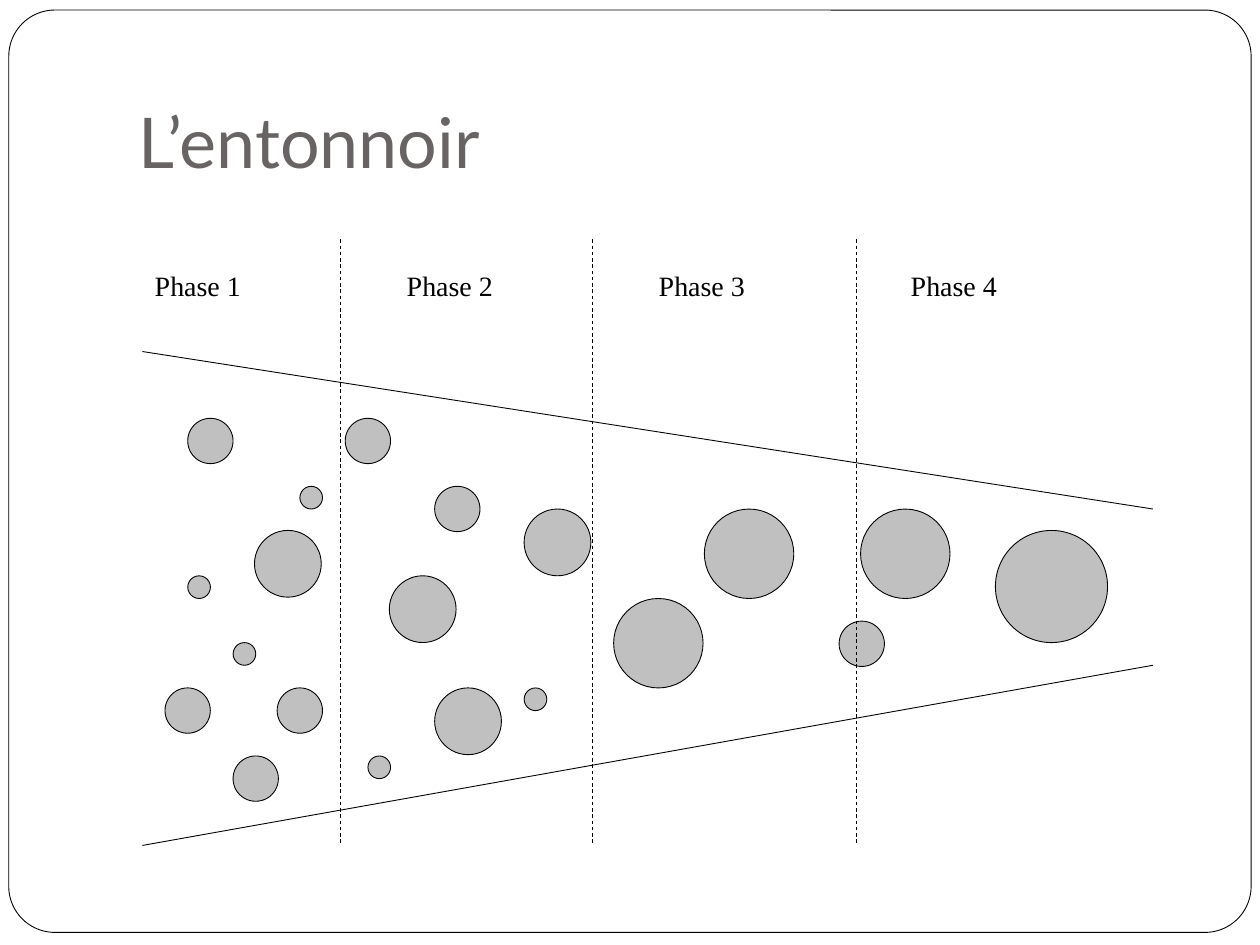
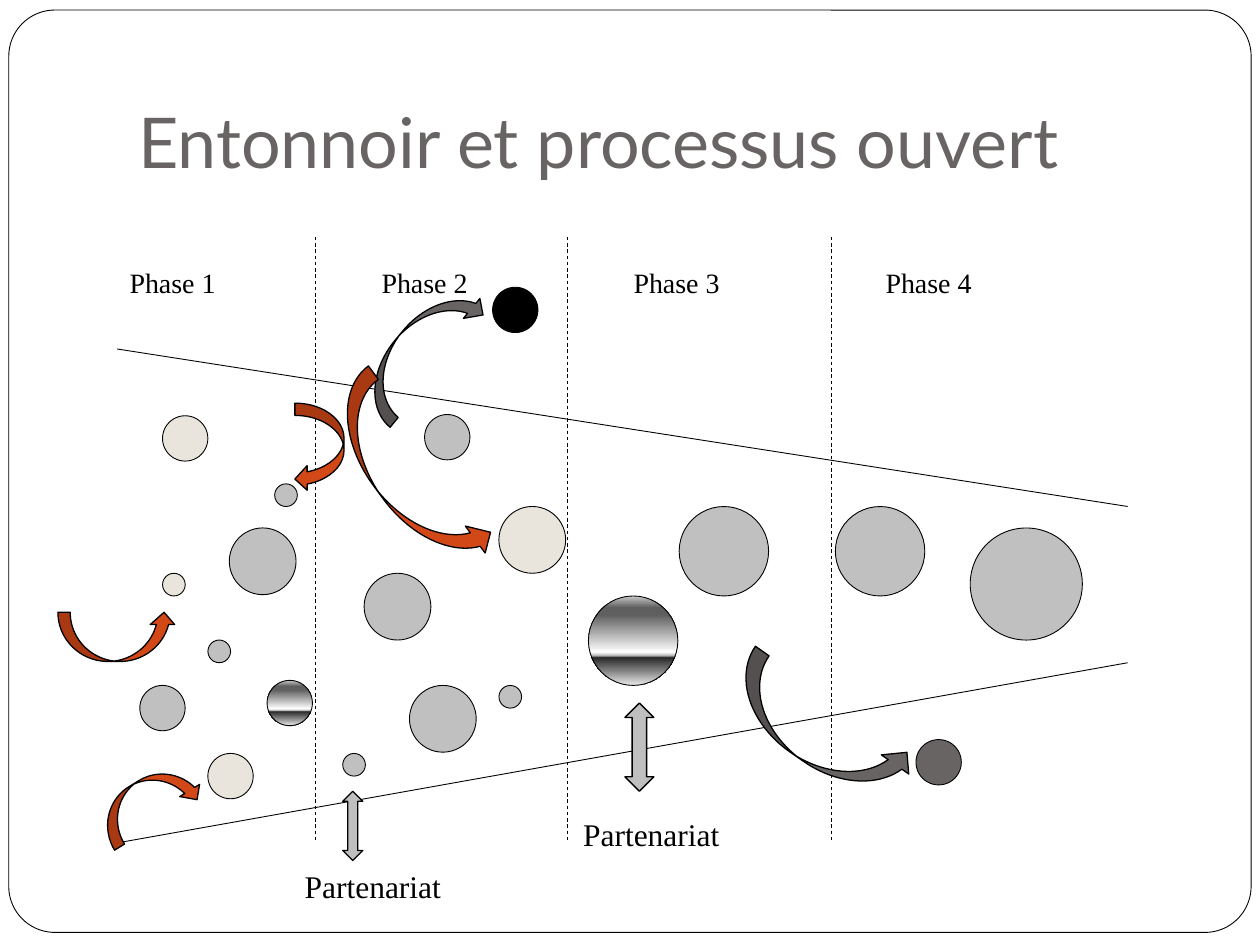
from lxml.etree import SubElement
from pptx import Presentation
from pptx.dml.color import RGBColor
from pptx.enum.dml import MSO_LINE
from pptx.enum.shapes import MSO_CONNECTOR, MSO_SHAPE
from pptx.enum.text import MSO_ANCHOR
from pptx.oxml.ns import qn
from pptx.util import Inches, Pt

BLACK, WHITE, GREY = "000000", "FFFFFF", "C0C0C0"
SLATE, CREAM, RUST, ARROW_GREY = "696464", "E9E5DC", "D34817", "BFBFBF"
CHROME = [(0, "CBCBCB"), (13, "5F5F5F"), (21, "5F5F5F"), (63, "FFFFFF"),
          (67, "B2B2B2"), (69, "292929"), (82, "777777"), (100, "EAEAEA")]

TITLE_FONT = {"name": "Lato", "size": Pt(40)}
PHASE_FONT = {"name": "Times New Roman", "size": Pt(16)}
LABEL_FONT = {"name": "Times New Roman", "size": Pt(18)}
TITLE_FRAME = {"vertical_anchor": MSO_ANCHOR.BOTTOM, "margin_bottom": Inches(0.1)}

TINY, SMALL, MEDIUM, LARGE, HUGE = 0.18, 0.36, 0.53, 0.71, 0.89


def add_outlined(page, kind, at, fill, width=0.5):
    """Add a black-outlined preset shape; a list as fill gives gradient stops."""
    shape = page.shapes.add_shape(kind, *map(Inches, at))
    shape.shadow.inherit = False
    shape.line.color.rgb = RGBColor.from_string(BLACK)
    shape.line.width = Pt(width)
    if isinstance(fill, str):
        shape.fill.solid()
        shape.fill.fore_color.rgb = RGBColor.from_string(fill)
        return shape
    shape.fill.gradient()
    shape.fill.gradient_angle = 270
    stops = shape._element.spPr.find(qn("a:gradFill")).find(qn("a:gsLst"))
    for old_stop in list(stops):
        stops.remove(old_stop)
    for percent, colour in fill:
        stop = SubElement(stops, qn("a:gs"), pos=str(percent * 1000))
        SubElement(stop, qn("a:srgbClr"), val=colour)
    return shape


def add_text(page, at, text, font, colour=BLACK, frame_format={}):
    box = page.shapes.add_textbox(*map(Inches, at))
    box.text_frame.word_wrap = True
    for name, value in frame_format.items():
        setattr(box.text_frame, name, value)
    para = box.text_frame.paragraphs[0]
    span = para.add_run()
    span.text = text
    for name, value in font.items():
        setattr(span.font, name, value)
    span.font.color.rgb = RGBColor.from_string(colour)
    return para


# Funnel geometry, before the offset of each slide
funnel_lines = [
    (1.13, 6.71, 9.15, 5.28, MSO_LINE.SOLID),
    (1.13, 2.79, 9.15, 4.04, MSO_LINE.SOLID),
] + [(x, 1.9, x, 6.71, MSO_LINE.DASH) for x in (2.7, 4.7, 6.8)]

# Projects that stay grey on both slides: left, top, diameter
steady_projects = [
    (2.38, 3.86, TINY), (1.85, 5.1, TINY), (2.02, 4.21, MEDIUM),
    (1.31, 5.46, SMALL), (3.09, 4.57, MEDIUM), (4.16, 5.46, TINY),
    (3.45, 5.46, MEDIUM), (5.59, 4.04, LARGE), (7.9, 4.21, HUGE),
    (6.83, 4.04, LARGE), (2.92, 6, TINY),
]
# Projects in the same place on both slides, with their open-process fill
opened_projects = [
    (1.49, 3.32, SMALL, CREAM), (1.49, 4.57, TINY, CREAM),
    (4.16, 4.04, MEDIUM, CREAM), (1.85, 6, SMALL, CREAM),
    (4.87, 4.75, LARGE, CHROME),
]
closed_funnel = [(x, y, size, GREY) for x, y, size, _ in opened_projects] + [
    (2.2, 5.46, SMALL, GREY), (3.45, 3.86, SMALL, GREY),
    (6.66, 4.93, SMALL, GREY), (2.74, 3.32, SMALL, GREY),
]
open_funnel = opened_projects + [
    (2.32, 5.42, SMALL, CHROME), (3.57, 3.31, SMALL, GREY),
    (7.47, 5.89, SMALL, SLATE), (4.11, 2.3, SMALL, BLACK),
]
funnels = [
    ("L’entonnoir", 0, 0, closed_funnel),
    ("Entonnoir et processus ouvert", -0.2, -0.02, open_funnel),
]

deck = Presentation()
deck.slide_width, deck.slide_height = Inches(10), Inches(7.5)

for title, dx, dy, projects in funnels:
    page = deck.slides.add_slide(deck.slide_layouts[6])
    frame = add_outlined(page, MSO_SHAPE.ROUNDED_RECTANGLE,
                         (0.07, 0.08, 9.86, 7.32), WHITE)
    frame.adjustments[0] = 0.05
    add_text(page, (1, 0.3, 8.5, 1.25), title, TITLE_FONT, SLATE, TITLE_FRAME)

    phases = "\t".join(f"Phase {number}" for number in range(1, 5))
    para = add_text(page, (1.13 + dx, 2.08 + dy, 7.84, 0.53), phases, PHASE_FONT)
    tabs = SubElement(para._p.get_or_add_pPr(), qn("a:tabLst"))
    for column in (1, 2, 3):
        SubElement(tabs, qn("a:tab"), pos=str(Inches(2 * column)), algn="l")

    grey_projects = [(*project, GREY) for project in steady_projects]
    for x, y, size, fill in grey_projects + projects:
        add_outlined(page, MSO_SHAPE.OVAL, (x + dx, y + dy, size, size), fill)

    for x1, y1, x2, y2, dash in funnel_lines:
        ends = (x1 + dx, y1 + dy, x2 + dx, y2 + dy)
        line = page.shapes.add_connector(MSO_CONNECTOR.STRAIGHT, *map(Inches, ends))
        line.line.color.rgb = RGBColor.from_string(BLACK)
        line.line.width = Pt(0.5)
        line.line.dash_style = dash
        SubElement(line._element.spPr, qn("a:effectLst"))

# Exchanges with the outside, on the open-process slide
LEFT, DOWN = MSO_SHAPE.CURVED_LEFT_ARROW, MSO_SHAPE.CURVED_DOWN_ARROW
BOTH_WAYS = MSO_SHAPE.UP_DOWN_ARROW
exchanges = [
    (LEFT, (2.34, 3.2, 0.39, 0.7), RUST, 0, None),
    (DOWN, (2.71, 2.57, 1.26, 0.41), SLATE, 309.6, None),
    (BOTH_WAYS, (4.96, 5.58, 0.23, 0.7), ARROW_GREY, 0, None),
    (DOWN, (5.7, 5.54, 1.6, 0.53), SLATE, 35, "flipV"),
    (BOTH_WAYS, (2.72, 6.28, 0.16, 0.55), ARROW_GREY, 0, None),
    (LEFT, (2.97, 2.89, 0.53, 1.77), RUST, 323.7, "flipH"),
    (DOWN, (0.46, 4.86, 0.94, 0.39), RUST, 0, "flipV"),
    (DOWN, (0.75, 6.18, 0.86, 0.37), RUST, 328.5, None),
]
for kind, at, fill, rotation, flip in exchanges:
    arrow = add_outlined(page, kind, at, fill, 0.75)
    arrow.rotation = rotation
    if flip:
        arrow._element.spPr.xfrm.set(flip, "1")

for x, y in ((4.53, 6.42), (2.32, 6.83)):
    add_text(page, (x, y, 1.64, 0.4), "Partenariat", LABEL_FONT)

deck.save("out.pptx")
